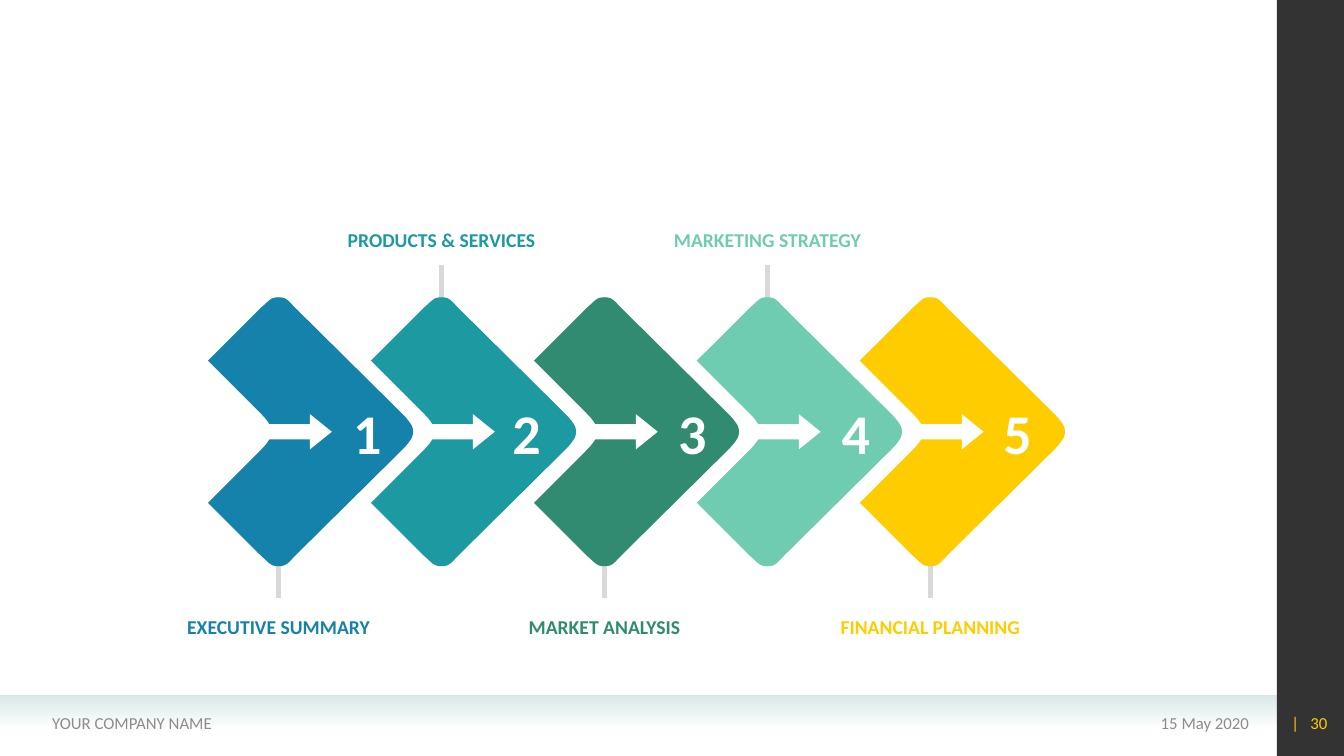
from lxml.etree import SubElement
from pptx import Presentation
from pptx.dml.color import RGBColor
from pptx.enum.shapes import MSO_CONNECTOR as CONNECTOR, MSO_SHAPE as SHAPE
from pptx.enum.text import MSO_ANCHOR as ANCHOR, PP_ALIGN as ALIGN
from pptx.oxml.ns import qn
from pptx.util import Pt

STEPS = [  # label, colour, centre of the number
    ("EXECUTIVE SUMMARY", "1482AB", 262.4),
    ("PRODUCTS & SERVICES", "1D9AA1", 376.2),
    ("MARKET ANALYSIS", "318B71", 494.6),
    ("MARKETING STRATEGY", "70CCB1", 611.3),
    ("FINANCIAL PLANNING", "FFCC00", 726.8),
]
FIRST_LEFT, PITCH, AXIS = 148.6, 116.4, 308.4
PEAK = 50.4  # from a chevron's left edge to its upper and lower corner

# Upper half of a chevron, from the notch to the tip, relative to its left edge
# and the axis: one point is a straight edge, three points are a Bézier curve
NOTCH = (43.9, -5.4)
UPPER_EDGES = [
    [(41.8, -9), (39.6, -11.2), (35.3, -15.5)],
    [(0, -50.8)],
    [(38.2, -88.9)],
    [(41.8, -91.8), (43.2, -94), (46.1, -95.4)],
    [(49, -96.3), (51.8, -96.3), (54.7, -95.4)],
    [(57.6, -94), (59, -91.8), (62.6, -88.2)],
    [(139, -12.6)],
    [(142.6, -9), (144, -6.8), (145.4, -4.7)],
]
TIP_BEND = [(146.9, -1.6), (146.9, 1.6)]
NOTCH_BEND = [(45.4, 1.9), (45.4, -1.9)]


def color(hex_code):
    return RGBColor.from_string(hex_code)


def add_text(text, left, top, width, height, size, hex_code,
             align=ALIGN.CENTER, anchor=ANCHOR.MIDDLE, bold=False, wrap=True):
    box = slide.shapes.add_textbox(Pt(left), Pt(top), Pt(width), Pt(height))
    frame = box.text_frame
    frame.word_wrap = wrap
    frame.vertical_anchor = anchor
    frame.text = text
    paragraph = frame.paragraphs[0]
    paragraph.alignment = align
    for run in paragraph.runs:
        run.font.name = "Calibri"
        run.font.size = Pt(size)
        run.font.bold = bold
        run.font.color.rgb = color(hex_code)
    return frame


deck = Presentation()
deck.slide_width, deck.slide_height = Pt(960), Pt(540)
slide = deck.slides.add_slide(deck.slide_layouts[6])

# Footer band fading downwards
band = slide.shapes.add_shape(SHAPE.RECTANGLE, 0, Pt(496.8), Pt(912), Pt(22.3))
band.fill.gradient()
band.fill.gradient_angle = 270
for stop in band.fill.gradient_stops:
    stop.color.rgb = color("D9E9E8")

# Dark side bar
side_bar = slide.shapes.add_shape(SHAPE.RECTANGLE, Pt(912), 0, Pt(48), Pt(540))
side_bar.fill.solid()
side_bar.fill.fore_color.rgb = color("000000")

for panel, opacity in ((band, 0), (side_bar, 80000)):
    panel.shadow.inherit = False
    panel.line.fill.background()
    last_color = list(panel._element.spPr.iter(qn("a:srgbClr")))[-1]
    SubElement(last_color, qn("a:alpha")).set("val", str(opacity))

# Footer texts
add_text("15 May 2020", 655.2, 501.8, 244.1, 28.8, 12, "8C8C8C", ALIGN.RIGHT)
add_text("YOUR COMPANY NAME", 30.2, 501.8, 352.8, 28.8, 12, "8C8C8C", ALIGN.LEFT)
page_number = add_text("|\t30", 907.2, 501.8, 48.2, 28.8, 12, "FFCC00", ALIGN.LEFT)
page_number.margin_left = Pt(15.2)
page_number.margin_right = 0
tab_stops = SubElement(page_number.paragraphs[0]._p.get_or_add_pPr(), qn("a:tabLst"))
SubElement(tab_stops, qn("a:tab"), pos=str(Pt(13.6)), algn="l")

# Chevron outline: the upper half, the tip, the mirrored half, the notch
upper = [NOTCH] + [point for edge in UPPER_EDGES for point in edge]
lower = [(x, -y) for x, y in reversed(upper)]
outline = upper + TIP_BEND + lower + NOTCH_BEND + [NOTCH]
upper_sizes = [len(edge) for edge in UPPER_EDGES]
edge_sizes = upper_sizes + [3] + upper_sizes[::-1] + [3]

for index, (label, hue, number_center) in enumerate(STEPS):
    left = FIRST_LEFT + index * PITCH
    peak = left + PEAK
    side = 1 if index % 2 == 0 else -1  # labels alternate below and above

    # Stem from the chevron to its label
    stem = slide.shapes.add_connector(
        CONNECTOR.STRAIGHT, Pt(peak), Pt(AXIS + side * 95.5),
        Pt(peak), Pt(AXIS + side * 118.8))
    stem.line.color.rgb = color("D9D9D9")
    stem.line.width = Pt(3)
    SubElement(stem._element.spPr, qn("a:effectLst"))

    # Chevron, its three-point edges turned into curves
    points = [(Pt(left + x), Pt(AXIS + y)) for x, y in outline]
    builder = slide.shapes.build_freeform(*points[0])
    builder.add_line_segments(points[1:], close=True)
    chevron = builder.convert_to_shape()
    segments = iter(list(chevron._element.spPr.iter(qn("a:lnTo"))))
    for size in edge_sizes:
        edge = [next(segments) for _ in range(size)]
        if size == 3:
            edge[0].tag = qn("a:cubicBezTo")
            for segment in edge[1:]:
                edge[0].append(segment[0])
                segment.getparent().remove(segment)

    # Arrow out of the notch
    arrow = slide.shapes.add_shape(
        SHAPE.RIGHT_ARROW, Pt(left + 39.4), Pt(AXIS - 12.6), Pt(49), Pt(25.2))
    arrow.adjustments[0], arrow.adjustments[1] = 0.43, 0.62
    for part, fill in ((chevron, hue), (arrow, "FFFFFF")):
        part.shadow.inherit = False
        part.fill.solid()
        part.fill.fore_color.rgb = color(fill)
        part.line.fill.background()

    # Label and number
    add_text(label, peak - 89.3, 435.2 if side > 0 else 158.4, 178.6, 24.5,
             14, hue, anchor=ANCHOR.BOTTOM, bold=True)
    add_text(str(index + 1), number_center - 18, 280.8, 36, 55.4,
             40, "FFFFFF", bold=True, wrap=False)

deck.save("out.pptx")
